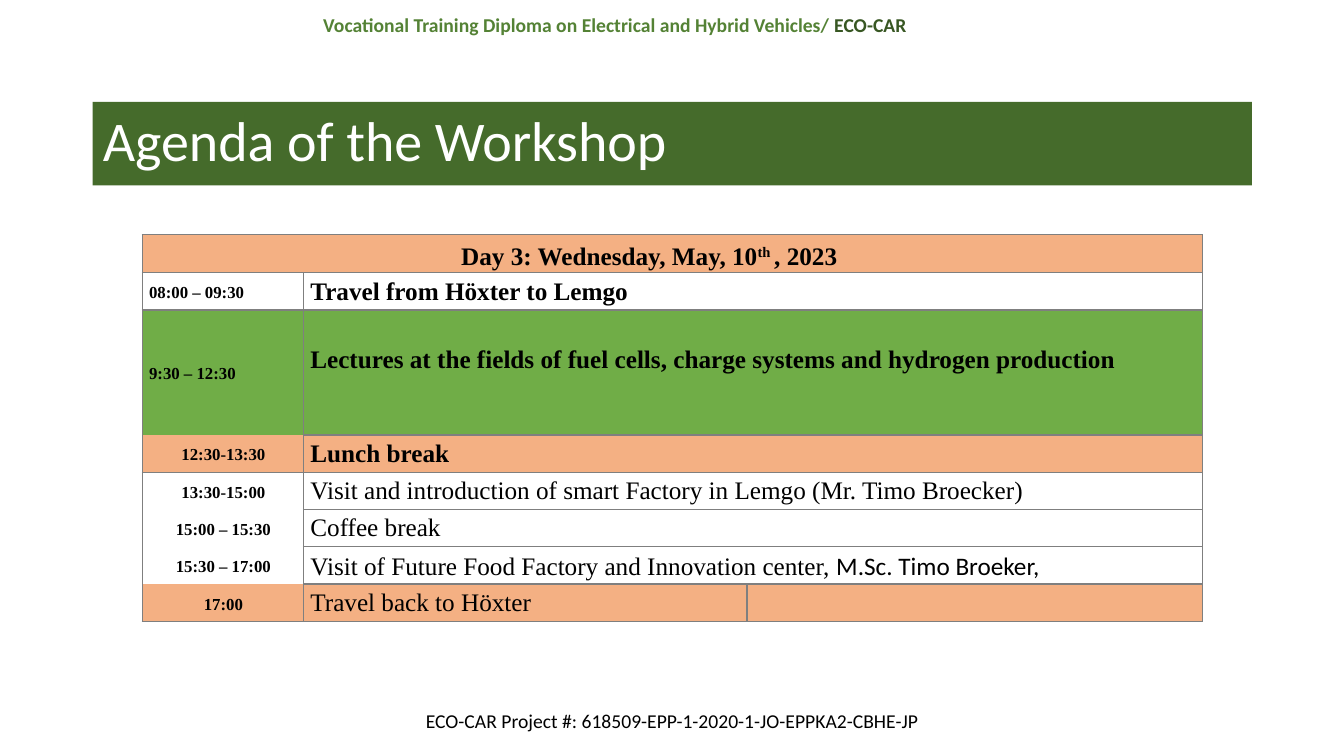
"""Build the workshop agenda slide."""
import pptx
import pptx.util
import pptx.dml.color
import pptx.enum.text
import pptx.oxml.ns
import lxml.etree

Pt = pptx.util.Pt
RGB = pptx.dml.color.RGBColor
ALIGN = pptx.enum.text.PP_ALIGN
MID = pptx.enum.text.MSO_ANCHOR.MIDDLE
TOP = pptx.enum.text.MSO_ANCHOR.TOP

BLACK = RGB(0x00, 0x00, 0x00)
WHITE = RGB(0xFF, 0xFF, 0xFF)
GREEN = RGB(0x54, 0x82, 0x35)
DARK = RGB(0x38, 0x57, 0x23)
BAND = RGB(0x45, 0x6B, 0x2B)
LIME = RGB(0x70, 0xAD, 0x47)
PEACH = RGB(0xF4, 0xB0, 0x83)
GREY = RGB(0x7F, 0x7F, 0x7F)
SANS = "Calibri"
SERIF = "Times New Roman"


def write(par, text, size=18, font=SERIF, color=BLACK, bold=False, base=0):
    run = par.add_run()
    run.text = text
    run.font.size = Pt(size)
    run.font.name = font
    run.font.color.rgb = color
    run.font.bold = bold
    if base:
        run._r.get_or_add_rPr().set("baseline", str(base * 1000))


class Page:
    def __init__(self):
        self.deck = pptx.Presentation()
        self.deck.slide_width, self.deck.slide_height = Pt(960), Pt(540)
        self.slide = self.deck.slides.add_slide(self.deck.slide_layouts[5])

    def title(self, text, left, top, width, height):
        box = self.slide.shapes.title
        box.left, box.top = Pt(left), Pt(top)
        box.width, box.height = Pt(width), Pt(height)
        box.fill.solid()
        box.fill.fore_color.rgb = BAND
        frame = box.text_frame
        frame.auto_size = pptx.enum.text.MSO_AUTO_SIZE.NONE
        frame.vertical_anchor = MID
        par = frame.paragraphs[0]
        par.alignment, par.line_spacing = ALIGN.LEFT, 0.9
        write(par, text, size=40, font=SANS, color=WHITE)

    def label(self, runs, left, top, width, height, anchor=TOP):
        box = self.slide.shapes.add_textbox(Pt(left), Pt(top), Pt(width), Pt(height))
        frame = box.text_frame
        frame.word_wrap = True
        frame.vertical_anchor = anchor
        par = frame.paragraphs[0]
        par.alignment = ALIGN.CENTER
        for text, style in runs:
            write(par, text, size=14, font=SANS, **style)

    def grid(self, left, top, cols, rows):
        shape = self.slide.shapes.add_table(
            len(rows), len(cols), Pt(left), Pt(top), Pt(sum(cols)), Pt(sum(rows)))
        table = shape.table
        table.first_row = table.horz_banding = False
        for col, width in zip(table.columns, cols):
            col.width = Pt(width)
        for row, height in zip(table.rows, rows):
            row.height = Pt(height)
        return table

    def cell(self, cell, runs, fill, align=ALIGN.LEFT, anchor=TOP, head=2, right=4):
        cell.margin_left, cell.margin_right = Pt(5), Pt(right)
        cell.margin_top, cell.margin_bottom = Pt(head), Pt(0.5)
        cell.vertical_anchor = anchor
        cell.fill.solid()
        cell.fill.fore_color.rgb = fill
        par = cell.text_frame.paragraphs[0]
        par.alignment, par.line_spacing = align, 1.07
        for text, style in runs:
            write(par, text, **style)

    def edge(self, cell, hide=""):
        props = cell._tc.get_or_add_tcPr()
        for spot, side in enumerate("LRTB"):
            line = lxml.etree.Element(pptx.oxml.ns.qn(f"a:ln{side}"), w=str(Pt(1)))
            kind = "noFill" if side in hide else "solidFill"
            paint = lxml.etree.SubElement(line, pptx.oxml.ns.qn(f"a:{kind}"))
            if side not in hide:
                lxml.etree.SubElement(
                    paint, pptx.oxml.ns.qn("a:srgbClr"), val=str(GREY))
            props.insert(spot, line)


def main():
    page = Page()
    page.label([("ECO-CAR Project #: 618509-EPP-1-2020-1-JO-EPPKA2-CBHE-JP", {})],
               282.24, 500.4, 396, 28.8, anchor=MID)
    page.label([("Vocational Training Diploma on Electrical and Hybrid Vehicles/ ",
                 dict(color=GREEN, bold=True)),
                ("ECO-CAR", dict(color=DARK, bold=True))],
               174.24, 5.76, 529.92, 41.04)
    page.title("Agenda of the Workshop", 66.24, 72.72, 828, 59.76)

    bold = dict(bold=True)
    day = [("Day 3: Wednesday, May, 10", bold), ("th ", dict(bold=True, base=30)),
           (", 2023", bold)]
    plan = [
        ("08:00 – 09:30", [("Travel from Höxter to Lemgo", bold)], WHITE, ""),
        ("9:30 – 12:30", [("Lectures at the fields of fuel cells, charge systems "
                           "and hydrogen production", bold)], LIME, "B"),
        ("12:30-13:30", [("Lunch break", bold)], PEACH, "T"),
        ("13:30-15:00", [("Visit and introduction of smart Factory in Lemgo "
                          "(Mr. Timo Broecker)", {})], WHITE, "B"),
        ("15:00 – 15:30", [("Coffee break", {})], WHITE, "TB"),
        ("15:30 – 17:00", [("Visit of Future Food Factory and Innovation center, ", {}),
                           ("M.Sc. Timo Broeker,", dict(font=SANS))], WHITE, "TB"),
        ("17:00", [("Travel back to Höxter", {})], PEACH, "T"),
    ]
    low, tall = 26.64, 89.28
    rows = [tall if fill == LIME else low for _, _, fill, _ in plan]
    table = page.grid(101.52, 167.76, [115.2, 316.8, 325.44], [low] + rows)

    page.cell(table.cell(0, 0), day, PEACH, ALIGN.CENTER, MID, head=3.5, right=38)
    for col in (1, 2):
        page.cell(table.cell(0, col), [], PEACH)
    for col in range(3):
        page.edge(table.cell(0, col))
    table.cell(0, 0).merge(table.cell(0, 2))

    for row, (time, topic, fill, hide) in enumerate(plan, 1):
        first, mid, last = (table.cell(row, col) for col in range(3))
        align = ALIGN.LEFT if row < 3 else ALIGN.CENTER
        page.cell(first, [(time, dict(size=12, bold=True))], fill, align, MID)
        page.cell(mid, topic, fill, head=24 if fill == LIME else 2)
        page.cell(last, [], fill)
        page.edge(first, hide)
        page.edge(mid)
        page.edge(last)
        if row < len(plan):
            mid.merge(last)

    page.deck.save("out.pptx")


if __name__ == "__main__":
    main()
